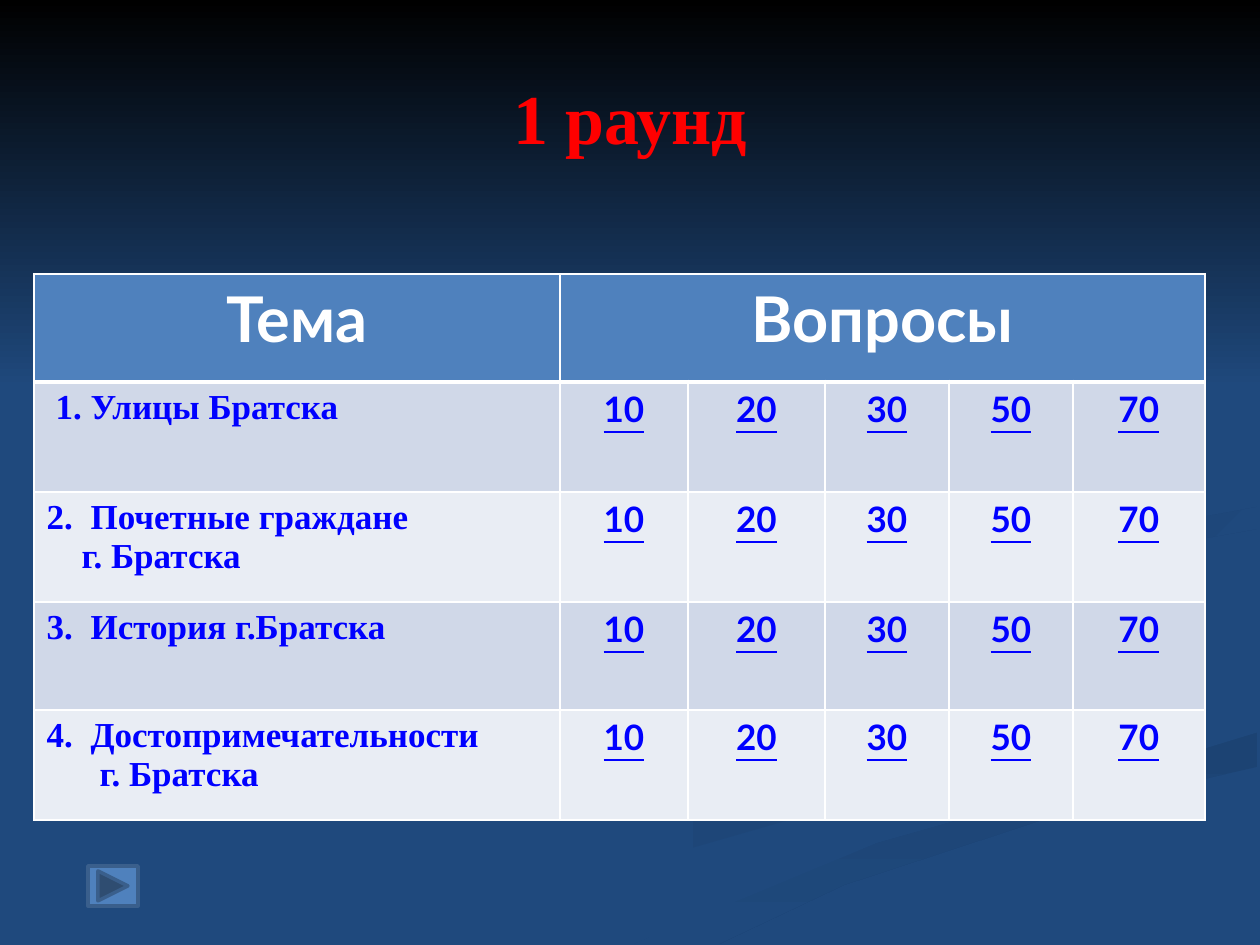
from lxml.etree import SubElement
from pptx import Presentation
from pptx.dml.color import RGBColor
from pptx.enum.shapes import MSO_SHAPE
from pptx.enum.text import MSO_ANCHOR, PP_ALIGN
from pptx.oxml.ns import qn
from pptx.util import Pt

SCALE = 914400 / 126
NAVY = RGBColor.from_string("1F497D")
NAVY_SHADE = RGBColor.from_string("1E4678")
NAVY_DEEP = RGBColor.from_string("1C4373")
NAVY_MID = RGBColor.from_string("1D4576")
NAVY_DIM = RGBColor.from_string("1D4474")
BLACK = RGBColor.from_string("000000")
WHITE = RGBColor.from_string("FFFFFF")
RED = RGBColor.from_string("FF0000")
LINK_BLUE = RGBColor.from_string("0000FF")
HEADER_BLUE = RGBColor.from_string("4F81BD")
BUTTON_LINE = RGBColor.from_string("3A5F8C")
BANDS = (RGBColor.from_string("D0D8E8"), RGBColor.from_string("E9EDF4"))
SERIF, SANS = "Times New Roman", "Lato"

RIBBONS = [
    ((NAVY, NAVY_SHADE), 0, [
        (984, 697), (748, 611), (724, 578), (770, 629), (990, 713), (730, 805),
        (525, 869), (378, 944), (455, 944), (629, 866), (932, 779), (1008, 732)]),
    ((NAVY, NAVY_SHADE), 45, [
        (1188, 718), (1119, 674), (939, 617), (912, 585), (965, 645),
        (1134, 702), (1126, 762)]),
    ((NAVY_DEEP, NAVY), 90, [
        (634, 944), (719, 944), (844, 885), (1085, 806), (1257, 767),
        (1257, 732), (1138, 769), (877, 843), (717, 906)]),
    ((NAVY,), 0, [
        (914, 585), (1120, 674), (1188, 718), (1110, 766), (780, 862), (601, 944),
        (634, 944), (877, 843), (1138, 769), (1259, 732), (1259, 678),
        (1013, 611), (1036, 547), (1259, 507), (1259, 488), (970, 538)]),
    ((NAVY_MID, NAVY), 45, [
        (984, 580), (1041, 625), (1014, 600), (1062, 564), (1257, 529),
        (1257, 507), (1036, 547)]),
    ((NAVY_DIM, NAVY), 45, [
        (861, 542), (1092, 484), (1126, 433), (960, 294), (1120, 422),
        (1046, 482), (727, 582), (784, 630), (757, 575)]),
]

COLUMNS = [526, 128, 137, 124, 124, 132]
ROWS = [108, 110, 110, 108, 110]
POINTS = ["10", "20", "30", "50", "70"]
TOPICS = [
    [("1.\tУлицы Братска", 44, -35)],
    [("2.\tПочетные граждане", 44, -44), ("г. Братска", 35, 0)],
    [("3.\tИстория г.Братска", 44, -44)],
    [("4.\tДостопримечательности", 44, -44), ("г. Братска", 53, 0)],
]


def px(n):
    return round(n * SCALE)


def write(p, text, font=SANS, size=20, color=LINK_BLUE, align=PP_ALIGN.CENTER,
          underline=False, margin=0, indent=0):
    p.alignment = align
    if margin:
        pPr = p._p.get_or_add_pPr()
        pPr.set("marL", str(px(margin)))
        pPr.set("indent", str(px(indent)))
    r = p.add_run()
    r.text = text
    f = r.font
    f.name, f.size, f.bold, f.underline = font, Pt(size), True, underline
    f.color.rgb = color


def paint(sp, colors, angle=0):
    sp.shadow.inherit = False
    sp.line.fill.background()
    if len(colors) == 1:
        sp.fill.solid()
        sp.fill.fore_color.rgb = colors[0]
        return
    sp.fill.gradient()
    sp.fill.gradient_angle = (360 - angle) % 360
    for stop, color in zip(sp.fill.gradient_stops, colors):
        stop.color.rgb = color


def add_ribbon(s, colors, angle, points):
    builder = s.shapes.build_freeform(*points[0], scale=SCALE)
    builder.add_line_segments(points[1:], close=True)
    paint(builder.convert_to_shape(), colors, angle)


def add_sky(s):
    sp = s.shapes.add_shape(MSO_SHAPE.RECTANGLE, 0, 0, px(1260), px(388))
    paint(sp, (BLACK, NAVY), 90)


def add_title(s, text):
    tf = s.shapes.add_textbox(px(63), px(38), px(1134), px(158)).text_frame
    tf.word_wrap = True
    tf.vertical_anchor = MSO_ANCHOR.MIDDLE
    write(tf.paragraphs[0], text, font=SERIF, size=40, color=RED)


def style_cell(cell, color, top=1, bottom=1):
    tcPr = cell._tc.get_or_add_tcPr()
    for side, width in (("L", 1), ("R", 1), ("T", top), ("B", bottom)):
        ln = SubElement(tcPr, qn(f"a:ln{side}"), w=str(Pt(width)))
        fill = SubElement(ln, qn("a:solidFill"))
        SubElement(fill, qn("a:srgbClr"), val=str(WHITE))
    cell.fill.solid()
    cell.fill.fore_color.rgb = color


def add_board(s):
    frame = s.shapes.add_table(len(ROWS), len(COLUMNS), px(34), px(274),
                               px(sum(COLUMNS)), px(sum(ROWS)))
    table = frame.table
    for column, width in zip(table.columns, COLUMNS):
        column.width = px(width)
    for row, height in zip(table.rows, ROWS):
        row.height = px(height)
    for cell in table.rows[0].cells:
        style_cell(cell, HEADER_BLUE, bottom=3)
    table.cell(0, 1).merge(table.cell(0, len(POINTS)))
    for i, text in enumerate(("Тема", "Вопросы")):
        p = table.cell(0, i).text_frame.paragraphs[0]
        write(p, text, size=36, color=WHITE)
    for i, lines in enumerate(TOPICS, 1):
        for cell in table.rows[i].cells:
            style_cell(cell, BANDS[(i - 1) % 2], top=3 if i == 1 else 1)
        tf = table.cell(i, 0).text_frame
        for n, (text, margin, indent) in enumerate(lines):
            p = tf.add_paragraph() if n else tf.paragraphs[0]
            write(p, text, font=SERIF, align=PP_ALIGN.LEFT, margin=margin, indent=indent)
        for j, value in enumerate(POINTS, 1):
            write(table.cell(i, j).text_frame.paragraphs[0], value, underline=True)


def add_next_button(s):
    sp = s.shapes.add_shape(MSO_SHAPE.ACTION_BUTTON_FORWARD_OR_NEXT,
                            px(88), px(866), px(50), px(40))
    paint(sp, (HEADER_BLUE,))
    sp.line.color.rgb = BUTTON_LINE
    sp.line.width = Pt(2)


def main():
    prs = Presentation()
    prs.slide_width, prs.slide_height = px(1260), px(945)
    s = prs.slides.add_slide(prs.slide_layouts[6])
    s.background.fill.solid()
    s.background.fill.fore_color.rgb = NAVY
    for colors, angle, points in RIBBONS:
        add_ribbon(s, colors, angle, points)
    add_sky(s)
    add_title(s, "1 раунд")
    add_board(s)
    add_next_button(s)
    prs.save("out.pptx")


if __name__ == "__main__":
    main()
